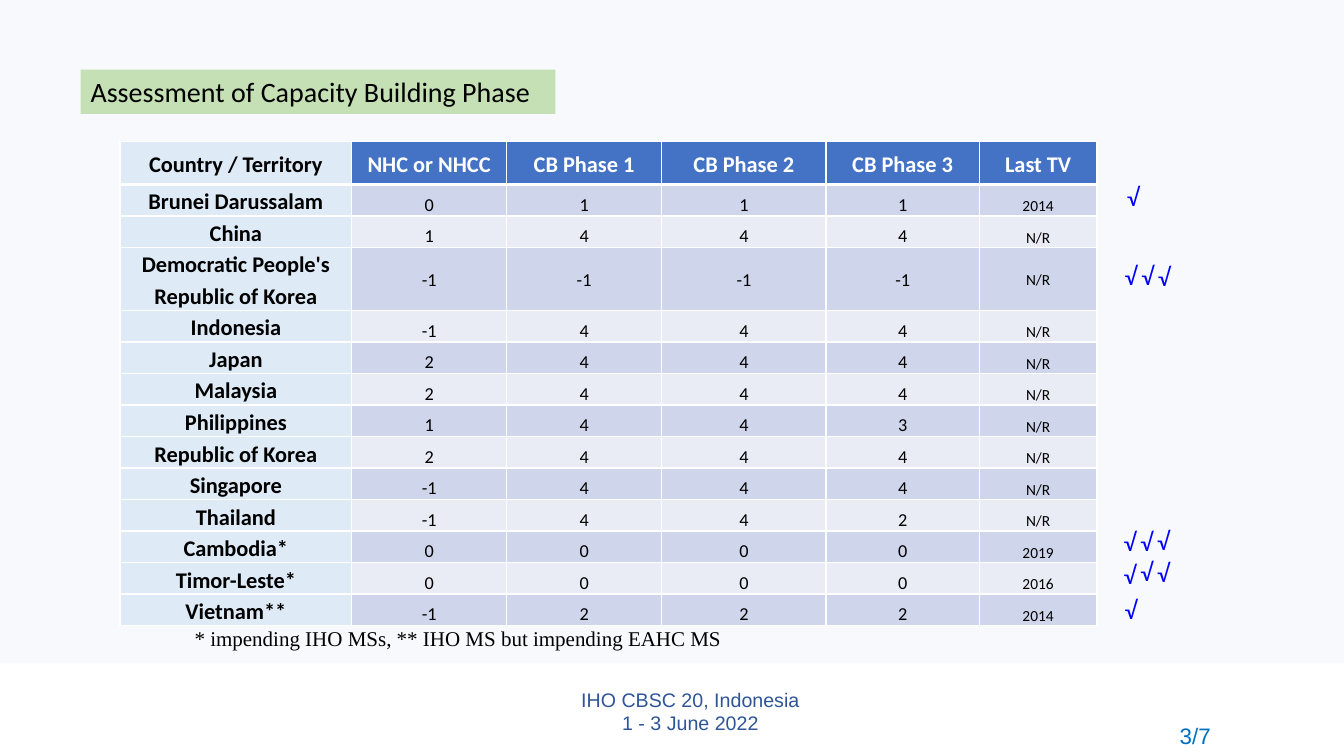
from dataclasses import dataclass, field
from typing import Any

from lxml.etree import SubElement
from pptx import Presentation
from pptx.dml.color import RGBColor
from pptx.enum.shapes import MSO_SHAPE
from pptx.enum.text import MSO_ANCHOR, MSO_AUTO_SIZE, PP_ALIGN
from pptx.oxml.ns import qn
from pptx.util import Pt

HUES = {
    "white": "FFFFFF", "black": "000000", "wash": "DAE3F3", "green": "C5E0B4",
    "head": "4472C4", "land": "DEEBF7", "odd": "CFD5EA", "even": "E9EBF5",
    "foot": "2F5597", "page": "0070C0", "tick": "0000FF",
}
HEADS = ["Country / Territory", "NHC or NHCC", "CB Phase 1", "CB Phase 2",
         "CB Phase 3", "Last TV"]
WIDTHS = [165.6, 110.5, 110.9, 117.4, 109.4, 84.2]
HEAD_TALL, ROW_TALL, DUAL_TALL = 31, 22.5, 44.5
STEP = 11.9


@dataclass
class Box:
    left: float
    top: float
    width: float
    height: float


@dataclass
class Style:
    size: float
    hue: str = "black"
    face: str = "Calibri"
    bold: bool = False
    align: Any = PP_ALIGN.LEFT
    space: float = 1.0


@dataclass
class Label:
    box: Box
    lines: list[str]
    style: Style
    frame: dict[str, Any] = field(default_factory=dict)


@dataclass
class Nation:
    name: str
    marks: list[int]
    last: str = "N/R"
    dual: bool = False


@dataclass
class Ticks:
    left: float
    tops: list[float]


NATIONS = [
    Nation("Brunei Darussalam", [0, 1, 1, 1], "2014"),
    Nation("China", [1, 4, 4, 4]),
    Nation("Democratic People's Republic of Korea", [-1, -1, -1, -1], dual=True),
    Nation("Indonesia", [-1, 4, 4, 4]),
    Nation("Japan", [2, 4, 4, 4]),
    Nation("Malaysia", [2, 4, 4, 4]),
    Nation("Philippines", [1, 4, 4, 3]),
    Nation("Republic of Korea", [2, 4, 4, 4]),
    Nation("Singapore", [-1, 4, 4, 4]),
    Nation("Thailand", [-1, 4, 4, 2]),
    Nation("Cambodia*", [0, 0, 0, 0], "2019"),
    Nation("Timor-Leste*", [0, 0, 0, 0], "2016"),
    Nation("Vietnam**", [-1, 2, 2, 2], "2014"),
]
TICKS = [
    Ticks(797.8, [126]),
    Ticks(796.3, [182.2, 182.2, 182.9]),
    Ticks(795.6, [372.2, 372.2, 371.5]),
    Ticks(795.6, [396, 393.8, 394.6]),
    Ticks(796.3, [421.2]),
]
SNUG = {"word_wrap": False, "auto_size": MSO_AUTO_SIZE.SHAPE_TO_FIT_TEXT}
LABELS = [
    Label(Box(331.2, 487.4, 324, 41), ["IHO CBSC 20, Indonesia", "1 - 3 June 2022"],
          Style(14, "foot", "Arial", align=PP_ALIGN.CENTER),
          {"vertical_anchor": MSO_ANCHOR.MIDDLE}),
    Label(Box(126, 443.5, 403.9, 25.2),
          ["* impending IHO MSs, ** IHO MS but impending EAHC MS"],
          Style(15, face="Times New Roman"), SNUG | {"margin_left": Pt(13)}),
    Label(Box(757.4, 512.6, 114.5, 28.8), ["3/7"],
          Style(16, "page", "Arial", align=PP_ALIGN.RIGHT)),
]
LABELS += [
    Label(Box(row.left + STEP * i, top, 23.8, 28.8), ["√"], Style(18, "tick"), SNUG)
    for row in TICKS for i, top in enumerate(row.tops)
]


def tint(hue: str) -> RGBColor:
    return RGBColor.from_string(HUES[hue])


def place(box: Box) -> list[int]:
    return [Pt(box.left), Pt(box.top), Pt(box.width), Pt(box.height)]


def apply(thing: Any, values: dict[str, Any]) -> None:
    for key, value in values.items():
        setattr(thing, key, value)


def write(frame: Any, lines: list[str], style: Style) -> None:
    for i, line in enumerate(lines):
        para = frame.add_paragraph() if i else frame.paragraphs[0]
        apply(para, {"alignment": style.align, "line_spacing": style.space})
        run = para.add_run()
        run.text = line
        apply(run.font, {"size": Pt(style.size), "name": style.face,
                         "bold": style.bold})
        run.font.color.rgb = tint(style.hue)


def panel(slide: Any, box: Box, hue: str) -> Any:
    shape = slide.shapes.add_shape(MSO_SHAPE.RECTANGLE, *place(box))
    shape.shadow.inherit = False
    shape.fill.solid()
    shape.fill.fore_color.rgb = tint(hue)
    shape.line.fill.background()
    return shape


def label(slide: Any, item: Label) -> None:
    frame = slide.shapes.add_textbox(*place(item.box)).text_frame
    apply(frame, {"word_wrap": True} | item.frame)
    write(frame, item.lines, item.style)


def edge(cell: Any, sides: dict[str, float]) -> None:
    props = cell._tc.get_or_add_tcPr()
    for i, (side, width) in enumerate(sides.items()):
        line = props.makeelement(qn(f"a:{side}"), {"w": str(Pt(width))})
        fill = SubElement(line, qn("a:solidFill"))
        SubElement(fill, qn("a:srgbClr"), val=HUES["white"])
        props.insert(i, line)


def fill_cell(cell: Any, text: str, hue: str, style: Style, anchor: Any,
              sides: dict[str, float]) -> None:
    apply(cell, {"margin_left": Pt(5), "margin_right": Pt(5), "margin_top": 0,
                 "margin_bottom": 0, "vertical_anchor": anchor})
    cell.fill.solid()
    cell.fill.fore_color.rgb = tint(hue)
    edge(cell, sides)
    write(cell.text_frame, [text], style)


def grid(slide: Any) -> None:
    talls = [HEAD_TALL] + [DUAL_TALL if n.dual else ROW_TALL for n in NATIONS]
    box = Box(85.7, 100.8, sum(WIDTHS), sum(talls))
    table = slide.shapes.add_table(len(talls), len(WIDTHS), *place(box)).table
    apply(table, {"first_row": False, "horz_banding": False})
    for col, width in zip(table.columns, WIDTHS):
        col.width = Pt(width)
    for row, tall in zip(table.rows, talls):
        row.height = Pt(tall)
    rows = [HEADS] + [[n.name, *map(str, n.marks), n.last] for n in NATIONS]
    for r, texts in enumerate(rows):
        sides = {"lnL": 1, "lnR": 1, "lnT": 3 if r == 1 else 1,
                 "lnB": 1 if r else 3}
        for c, text in enumerate(texts):
            bold = r == 0 or c == 0
            size = 16 if bold else 11 if c == len(WIDTHS) - 1 else 13
            hue = "land" if c == 0 else "head" if r == 0 else "odd" if r % 2 else "even"
            ink = "white" if hue == "head" else "black"
            mid = r == 0 or (c > 0 and NATIONS[r - 1].dual)
            style = Style(size, ink, bold=bold, align=PP_ALIGN.CENTER, space=1.15)
            fill_cell(table.cell(r, c), text, hue, style,
                      MSO_ANCHOR.MIDDLE if mid else MSO_ANCHOR.BOTTOM, sides)


def main() -> None:
    deck = Presentation()
    apply(deck, {"slide_width": Pt(960), "slide_height": Pt(540)})
    slide = deck.slides.add_slide(deck.slide_layouts[6])
    wash = panel(slide, Box(0, 0, 960, 473.8), "wash")
    color = wash.fill._xPr.find(f".//{qn('a:srgbClr')}")
    SubElement(color, qn("a:alpha"), val="21000")
    title = panel(slide, Box(57.6, 49.7, 339.1, 31.7), "green").text_frame
    apply(title, {"word_wrap": True, "vertical_anchor": MSO_ANCHOR.TOP})
    write(title, ["Assessment of Capacity Building Phase"], Style(20))
    grid(slide)
    for item in LABELS:
        label(slide, item)
    deck.save("out.pptx")


if __name__ == "__main__":
    main()
